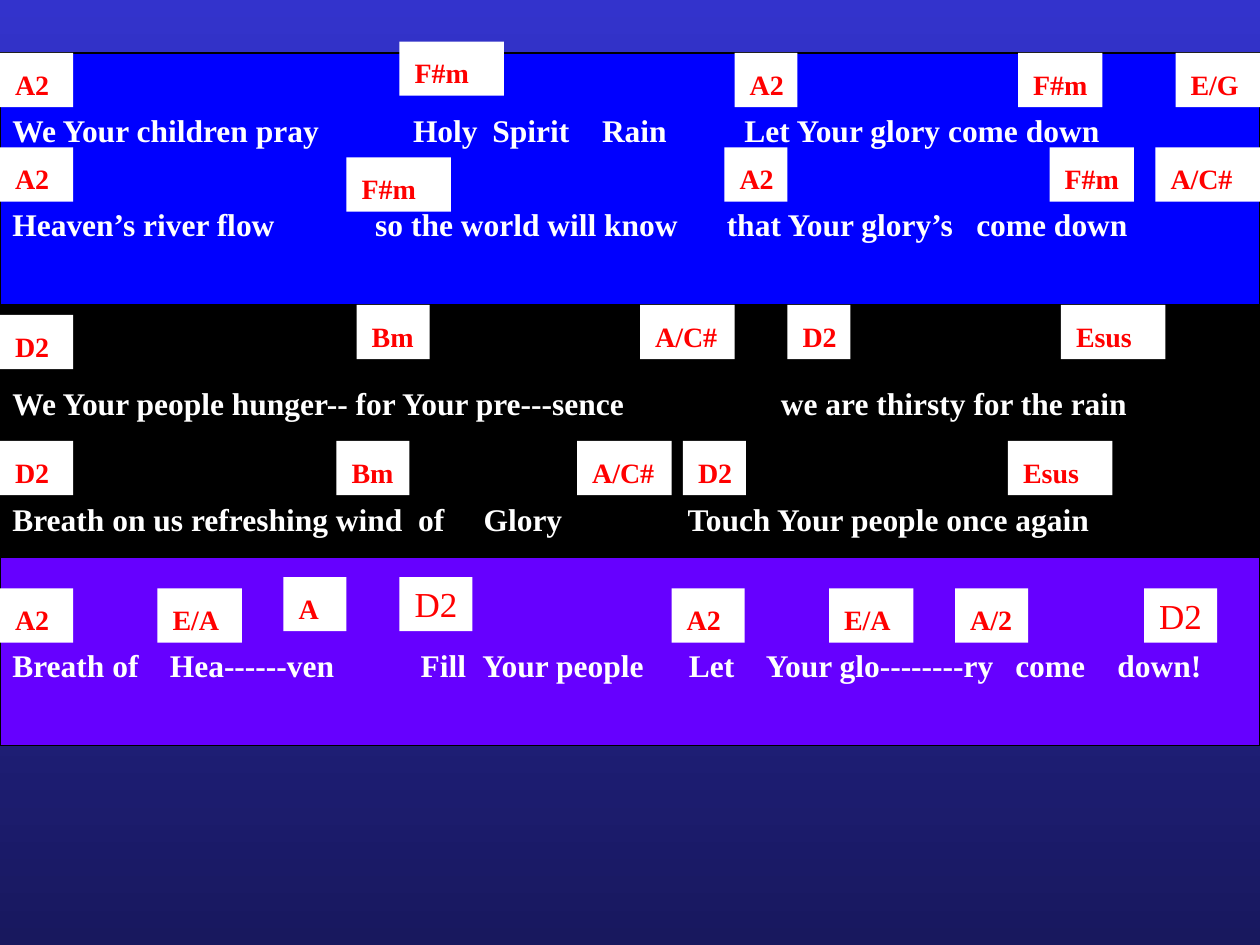
from pptx import Presentation
from pptx.dml.color import RGBColor
from pptx.enum import shapes, text
from pptx.oxml import ns, xmlchemy as xml
from pptx.util import Inches, Pt


def tint(code):
    return RGBColor.from_string(code)


class Sheet:
    font = "Times New Roman"
    white, red, black = "FFFFFF", "FF0000", "000000"

    def __init__(self, slide):
        self.slide = slide

    def back(self, top, bottom):
        fill = self.slide.background.fill
        fill.gradient()
        fill.gradient_angle = 270
        for stop, code in zip(fill.gradient_stops, (top, bottom)):
            stop.color.rgb = tint(code)

    def rect(self, x, y, w, h, code):
        box = self.slide.shapes.add_shape(
            shapes.MSO_SHAPE.RECTANGLE, Inches(x), Inches(y), Inches(w), Inches(h))
        box.shadow.inherit = False
        box.fill.solid()
        box.fill.fore_color.rgb = tint(code)
        return box

    def band(self, y, h, code):
        box = self.rect(0, y, 10, h, code)
        box.line.color.rgb = tint(self.black)
        box.line.width = Pt(0.75)

    def label(self, box, words, size, code, bold=True, inset=0.1):
        frame = box.text_frame
        frame.margin_left = Inches(inset)
        frame.margin_right = 0
        frame.vertical_anchor = text.MSO_ANCHOR.BOTTOM
        frame.text = words
        para = frame.paragraphs[0]
        para.alignment = text.PP_ALIGN.LEFT
        para.font.name = self.font
        para.font.size = Pt(size)
        para.font.bold = bold
        para.font.color.rgb = tint(code)
        return para

    def lyric(self, y, words, stops):
        box = self.slide.shapes.add_textbox(0, Inches(y), Inches(10), Inches(0.4))
        box.text_frame.word_wrap = True
        para = self.label(box, words, 18, self.white)
        tabs = xml.OxmlElement("a:tabLst")
        for stop in stops:
            tab = xml.OxmlElement("a:tab")
            tab.set("pos", str(Inches(stop)))
            tab.set("algn", "l")
            tabs.append(tab)
        props = para._p.get_or_add_pPr()
        props.find(ns.qn("a:defRPr")).addprevious(tabs)

    def chord(self, x, y, w, name, size=16):
        box = self.rect(x, y, w, 0.43, self.white)
        box.line.fill.background()
        box.text_frame.word_wrap = False
        self.label(box, name, size, self.red, size == 16, 0.12)


BANDS = [(2.42, 2, "000000"), (0.42, 2, "0000FF"), (4.42, 1.5, "6600FF")]

LYRICS = [
    (0.83, "We Your children pray\tHoly\tSpirit\tRain\tLet Your glory come down",
     [3.18, 3.81, 4.68, 5.81]),
    (1.58, "Heaven’s river flow\tso the world will know\tthat Your glory’s\tcome down",
     [2.88, 5.67, 7.65]),
    (3, "We Your people hunger-- for Your pre---sence\twe are thirsty for the rain",
     [6.1]),
    (3.92, "Breath on us refreshing wind\tof\tGlory\tTouch Your people once again",
     [3.22, 3.74, 5.36]),
    (5.08, "Breath of\tHea------ven\tFill\tYour people\tLet\tYour glo--------ry\tcome\tdown!",
     [1.25, 3.24, 3.73, 5.37, 5.98, 7.96, 8.77]),
]

CHORDS = {
    0.33: [(3.17, 0.83, "F#m")],
    0.42: [(0, 0.58, "A2"), (5.83, 0.5, "A2"), (8.08, 0.67, "F#m"), (9.33, 0.67, "E/G")],
    1.17: [(0, 0.58, "A2"), (5.75, 0.5, "A2"), (8.33, 0.67, "F#m"), (9.17, 0.83, "A/C#")],
    1.25: [(2.75, 0.83, "F#m")],
    2.42: [(2.83, 0.58, "Bm"), (5.08, 0.75, "A/C#"), (6.25, 0.5, "D2"), (8.42, 0.83, "Esus")],
    2.5: [(0, 0.58, "D2")],
    3.5: [(0, 0.58, "D2"), (2.67, 0.58, "Bm"), (4.58, 0.75, "A/C#"), (5.42, 0.5, "D2"),
          (8, 0.83, "Esus")],
    4.58: [(2.25, 0.5, "A"), (3.17, 0.58, "D2", 20)],
    4.67: [(0, 0.58, "A2"), (1.25, 0.67, "E/A"), (5.33, 0.58, "A2"), (6.58, 0.67, "E/A"),
           (7.58, 0.58, "A/2"), (9.08, 0.58, "D2", 20)],
}


def main():
    deck = Presentation()
    deck.slide_width, deck.slide_height = Inches(10), Inches(7.5)
    sheet = Sheet(deck.slides.add_slide(deck.slide_layouts[6]))
    sheet.back("3333CC", "18185E")
    for band in BANDS:
        sheet.band(*band)
    for lyric in LYRICS:
        sheet.lyric(*lyric)
    for y, row in CHORDS.items():
        for x, *rest in row:
            sheet.chord(x, y, *rest)
    deck.save("out.pptx")


if __name__ == "__main__":
    main()
